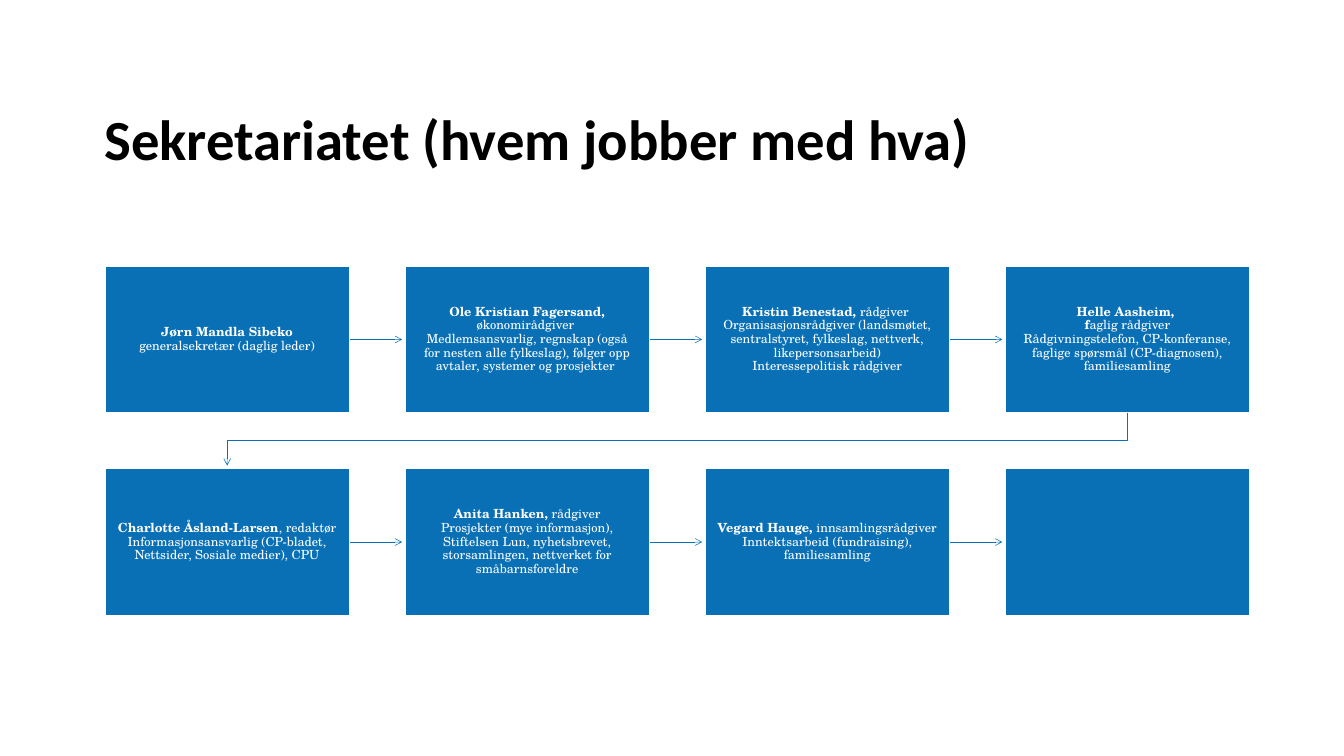
from lxml.etree import SubElement
from pptx import Presentation
from pptx.dml.color import RGBColor
from pptx.enum.shapes import MSO_CONNECTOR, MSO_SHAPE
from pptx.enum.text import MSO_ANCHOR, PP_ALIGN
from pptx.oxml.ns import qn
from pptx.util import Inches, Pt

BLUE = RGBColor(0x09, 0x70, 0xB5)
WHITE = RGBColor(0xFF, 0xFF, 0xFF)
BLACK = RGBColor(0x00, 0x00, 0x00)

# Grid of staff cards, in inches
COLUMNS = 4
LEFT, TOP = 1.39, 3.52
CARD_WIDTH, CARD_HEIGHT = 3.23, 1.94
STEP_X, STEP_Y = 3.97, 2.68

# Bold part and regular part of each card
STAFF = [
    ("Jørn Mandla Sibeko ", "generalsekretær (daglig leder)"),
    ("Ole Kristian Fagersand, ",
     "økonomirådgiver \nMedlemsansvarlig, regnskap (også for nesten alle "
     "fylkeslag), følger opp avtaler, systemer og prosjekter "),
    ("Kristin Benestad, ",
     "rådgiver \nOrganisasjonsrådgiver (landsmøtet, sentralstyret, fylkeslag, "
     "nettverk, likepersonsarbeid)\nInteressepolitisk rådgiver"),
    ("Helle Aasheim, \nf",
     "aglig rådgiver\nRådgivningstelefon, CP-konferanse, faglige spørsmål "
     "(CP-diagnosen), familiesamling"),
    ("Charlotte Åsland-Larsen",
     ", redaktør\nInformasjonsansvarlig (CP-bladet, Nettsider, "
     "Sosiale medier), CPU"),
    ("Anita Hanken, ",
     "rådgiver\nProsjekter (mye informasjon), Stiftelsen Lun, nyhetsbrevet, "
     "storsamlingen, nettverket for småbarnsforeldre"),
    ("Vegard Hauge, ",
     "innsamlingsrådgiver\nInntektsarbeid (fundraising), familiesamling"),
    ("", ""),
]


def add_text(para, text, font, size, color, bold):
    for index, line in enumerate(text.split("\n")):
        if index:
            para.add_line_break()
        if line:
            span = para.add_run()
            span.text = line
            span.font.name = font
            span.font.size = Pt(size)
            span.font.bold = bold
            span.font.color.rgb = color


def set_frame(frame, anchor, side, vertical):
    frame.word_wrap = True
    frame.vertical_anchor = anchor
    frame.margin_left = frame.margin_right = Inches(side)
    frame.margin_top = frame.margin_bottom = Inches(vertical)
    frame.paragraphs[0].line_spacing = 0.9
    return frame.paragraphs[0]


def add_title(page, text):
    box = page.shapes.add_textbox(Inches(1.38), Inches(0.32), Inches(15.16), Inches(1.97))
    para = set_frame(box.text_frame, MSO_ANCHOR.BOTTOM, 0, 0)
    add_text(para, text, "Calibri", 54, BLACK, True)


def add_card(page, left, top, name, duties):
    card = page.shapes.add_shape(MSO_SHAPE.RECTANGLE, Inches(left), Inches(top),
                                 Inches(CARD_WIDTH), Inches(CARD_HEIGHT))
    card.shadow.inherit = False
    card.fill.solid()
    card.fill.fore_color.rgb = BLUE
    card.line.color.rgb = WHITE
    card.line.width = Pt(1)
    if name:
        para = set_frame(card.text_frame, MSO_ANCHOR.MIDDLE, 0.16, 0.17)
        para.alignment = PP_ALIGN.CENTER
        add_text(para, name, "TeX Gyre Schola", 12, WHITE, True)
        add_text(para, duties, "TeX Gyre Schola", 12, WHITE, False)


def style_arrow(arrow):
    arrow.line.color.rgb = BLUE
    arrow.line.width = Pt(0.5)
    SubElement(arrow.line._get_or_add_ln(), qn("a:tailEnd"), type="arrow")


def add_arrow(page, start, end, y):
    arrow = page.shapes.add_connector(MSO_CONNECTOR.STRAIGHT, Inches(start), Inches(y),
                                      Inches(end), Inches(y))
    style_arrow(arrow)
    SubElement(arrow._element.spPr, qn("a:effectLst"))


def add_row_arrow(page, points):
    corners = [(Inches(x), Inches(y)) for x, y in points]
    builder = page.shapes.build_freeform(*corners[0])
    builder.add_line_segments(corners[1:], close=False)
    arrow = builder.convert_to_shape()
    arrow.shadow.inherit = False
    arrow.fill.background()
    style_arrow(arrow)


def main():
    deck = Presentation()
    deck.slide_width, deck.slide_height = Inches(17.78), Inches(10)
    page = deck.slides.add_slide(deck.slide_layouts[6])
    add_title(page, "Sekretariatet (hvem jobber med hva)")

    # Cards, each with an arrow to the next one in its row
    for index, (name, duties) in enumerate(STAFF):
        row, column = divmod(index, COLUMNS)
        left, top = LEFT + column * STEP_X, TOP + row * STEP_Y
        if column < COLUMNS - 1:
            right = left + CARD_WIDTH
            add_arrow(page, right, right + 0.7, top + CARD_HEIGHT / 2)
        add_card(page, left, top, name, duties)

    # Arrow from the end of the first row to the start of the second
    first = LEFT + CARD_WIDTH / 2
    last = first + (COLUMNS - 1) * STEP_X
    bottom = TOP + CARD_HEIGHT
    middle = (bottom + TOP + STEP_Y) / 2
    add_row_arrow(page, [(last, bottom), (last, middle), (first, middle),
                         (first, bottom + 0.7)])

    deck.save("out.pptx")


if __name__ == "__main__":
    main()
